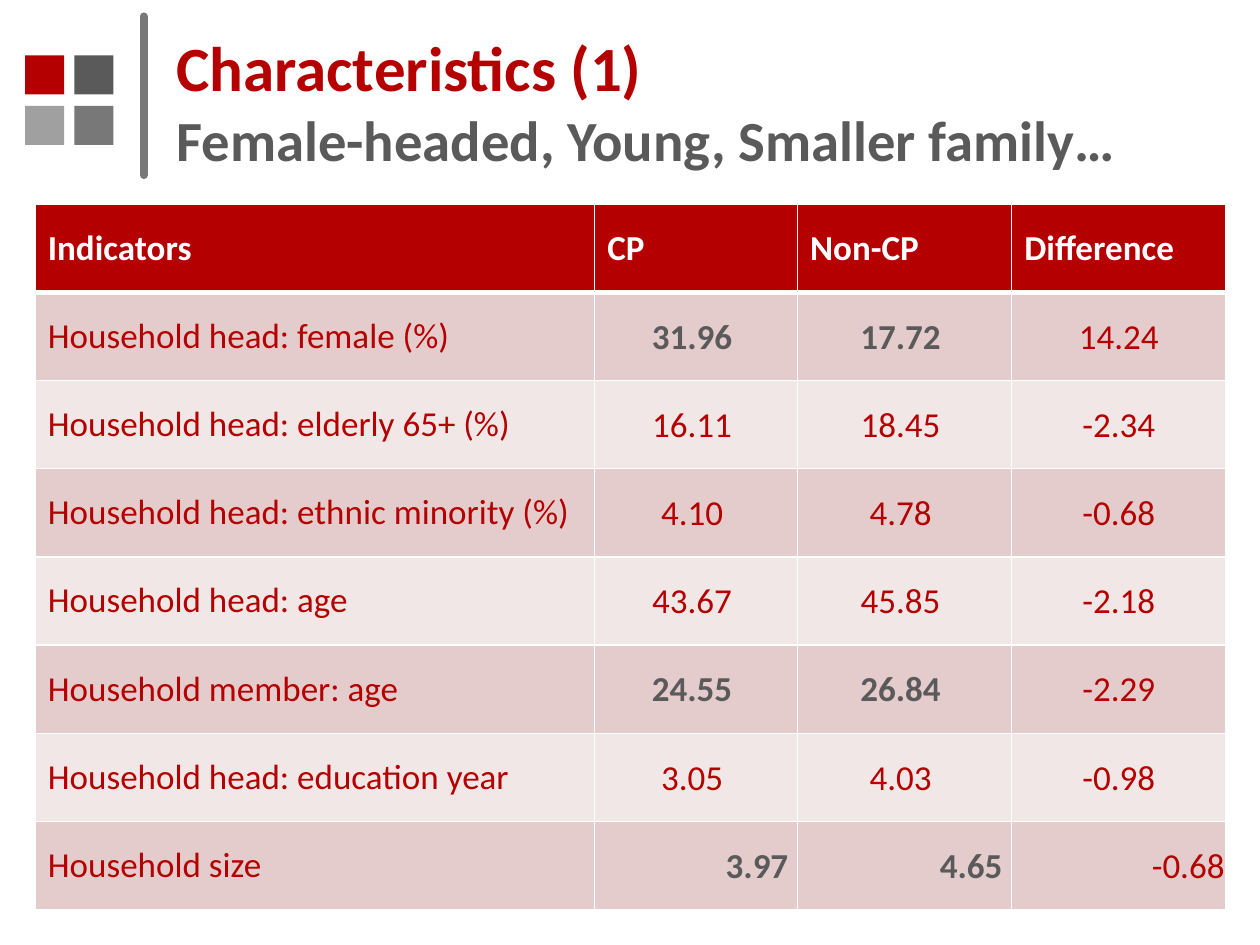
import pptx
import pptx.dml.color
import pptx.enum.shapes
import pptx.enum.text
import pptx.oxml
import pptx.oxml.ns
import pptx.util
from pptx.util import Inches, Pt

FONT = "Calibri"
COLORS = {
    "red": "B40000", "dark": "5A5A5A", "middle": "787878", "light": "A0A0A0",
    "white": "FFFFFF", "odd_row": "E5CCCC", "even_row": "F2E7E7",
}
TITLE_RUNS = [
    ("Characteristics (1)", 36, "red"),
    ("Female-headed, Young, Smaller family…", 32.4, "dark"),
]
LOGO_SQUARES = [["red", "dark"], ["light", "middle"]]
HEADERS = ["Indicators", "CP", "Non-CP", "Difference"]
ROWS = [
    ("Household head: female (%)", "31.96 ", "17.72 ", "14.24"),
    ("Household head: elderly 65+ (%)", "16.11 ", "18.45 ", "-2.34"),
    ("Household head: ethnic minority (%)", "4.10 ", "4.78 ", "-0.68"),
    ("Household head: age", "43.67 ", "45.85 ", "-2.18"),
    ("Household member: age", "24.55 ", "26.84 ", "-2.29"),
    ("Household head: education year", "3.05 ", "4.03 ", "-0.98"),
    ("Household size", "3.97 ", "4.65 ", "-0.68"),
]
EMPHASIZED_ROWS = {1, 5, 7}
COLUMN_WIDTHS = [4.44, 1.61, 1.7, 1.7]
ROW_HEIGHT = 0.7
ALIGN = pptx.enum.text.PP_ALIGN
MIDDLE = pptx.enum.text.MSO_ANCHOR.MIDDLE


def rgb(name):
    return pptx.dml.color.RGBColor.from_string(COLORS[name])


def add_run(paragraph, text, size, color, bold):
    run = paragraph.add_run()
    run.text = text
    run.font.name = FONT
    run.font.size = Pt(size)
    run.font.bold = bold
    run.font.color.rgb = rgb(color)


def add_logo(slide):
    for row, names in enumerate(LOGO_SQUARES):
        for column, name in enumerate(names):
            square = slide.shapes.add_shape(
                pptx.enum.shapes.MSO_SHAPE.RECTANGLE,
                Inches(0.2 + 0.39 * column), Inches(0.44 + 0.4 * row),
                Inches(0.31), Inches(0.31))
            square.shadow.inherit = False
            square.fill.solid()
            square.fill.fore_color.rgb = rgb(name)
            square.line.fill.background()


def add_divider(slide):
    divider = slide.shapes.add_connector(
        pptx.enum.shapes.MSO_CONNECTOR.STRAIGHT,
        Inches(1.14), Inches(0.13), Inches(1.14), Inches(1.39))
    divider.line.color.rgb = rgb("middle")
    divider.line.width = Pt(4.5)
    divider.line._get_or_add_ln().set("cap", "rnd")
    properties = divider._element.spPr
    properties.append(pptx.oxml.parse_xml(
        f'<a:effectLst {pptx.oxml.ns.nsdecls("a")}/>'))


def fill_title(title):
    title.left, title.top = Inches(1.3), Inches(0.29)
    title.width, title.height = Inches(7.96), Inches(1.02)
    frame = title.text_frame
    frame.word_wrap = True
    frame.auto_size = pptx.enum.text.MSO_AUTO_SIZE.NONE
    frame.vertical_anchor = MIDDLE
    paragraph = frame.paragraphs[0]
    paragraph.alignment = ALIGN.LEFT
    for index, (text, size, color) in enumerate(TITLE_RUNS):
        if index:
            paragraph.add_line_break()
        add_run(paragraph, text, size, color, True)


def set_borders(cell, top, bottom):
    """Draw white cell borders; top and bottom are widths in points."""
    properties = cell._tc.get_or_add_tcPr()
    for side, width in (("L", 1), ("R", 1), ("T", top), ("B", bottom)):
        properties.append(pptx.oxml.parse_xml(
            f'<a:ln{side} {pptx.oxml.ns.nsdecls("a")} w="{Pt(width)}">'
            f'<a:solidFill><a:srgbClr val="{COLORS["white"]}"/></a:solidFill>'
            f'</a:ln{side}>'))


def fill_cell(cell, row, column, text):
    header = row == 0
    set_borders(cell, 3 if row == 1 else 1, 3 if header else 1)
    cell.fill.solid()
    cell.fill.fore_color.rgb = rgb(
        "red" if header else "odd_row" if row % 2 else "even_row")
    cell.vertical_anchor = MIDDLE
    paragraph = cell.text_frame.paragraphs[0]
    if header or column == 0:
        paragraph.alignment = ALIGN.LEFT
    else:
        cell.margin_left = cell.margin_right = cell.margin_top = Inches(0.01)
        cell.margin_bottom = 0
        paragraph.alignment = ALIGN.RIGHT if row == len(ROWS) else ALIGN.CENTER
    emphasized = row in EMPHASIZED_ROWS and column in (1, 2)
    color = "white" if header else "dark" if emphasized else "red"
    add_run(paragraph, text, 20, color, header or emphasized)


def add_indicator_table(slide):
    records = [HEADERS, *ROWS]
    table = slide.shapes.add_table(
        len(records), len(HEADERS), Inches(0.28), Inches(1.62),
        Inches(sum(COLUMN_WIDTHS)), Inches(ROW_HEIGHT * len(records))).table
    for column, width in zip(table.columns, COLUMN_WIDTHS):
        column.width = Inches(width)
    for row, record in enumerate(records):
        table.rows[row].height = Inches(ROW_HEIGHT)
        for column, text in enumerate(record):
            fill_cell(table.cell(row, column), row, column, text)


def main():
    presentation = pptx.Presentation()
    presentation.slide_width = Inches(10)
    presentation.slide_height = Inches(7.5)
    slide = presentation.slides.add_slide(presentation.slide_layouts[5])
    add_logo(slide)
    add_divider(slide)
    fill_title(slide.shapes.title)
    add_indicator_table(slide)
    presentation.save("out.pptx")


if __name__ == "__main__":
    main()
